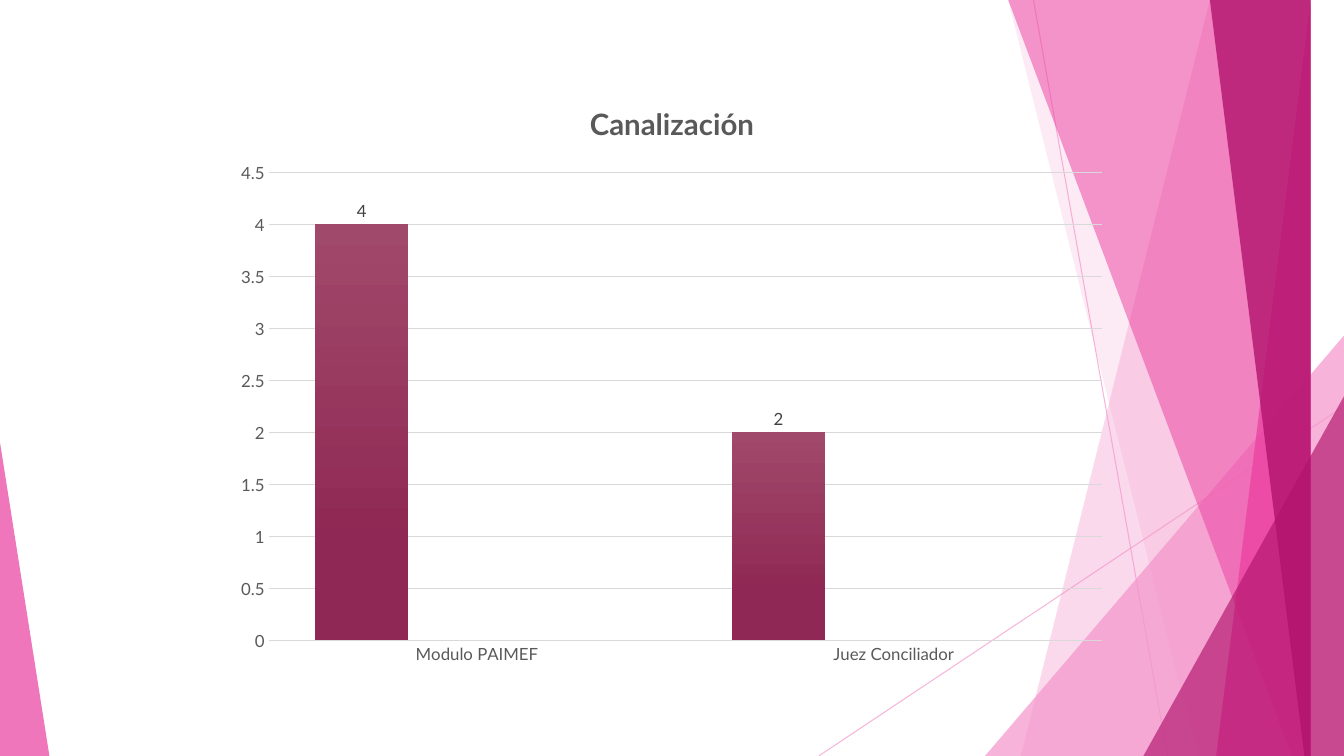
import pptx
import pptx.chart.data
import pptx.dml.color
import pptx.enum.chart
import pptx.enum.shapes
import pptx.oxml
import pptx.oxml.ns
import pptx.util
from lxml import etree

Inches, Pt = pptx.util.Inches, pptx.util.Pt
WIDTH, HEIGHT = 13.33, 7.5
FONT = "Lato"

# Content
TITLE = "Canalización"
CATEGORIES = ["Modulo PAIMEF", "Juez Conciliador"]
SERIES = [  # name, values, gradient from top to bottom
    ("Series 1", (4, 2), ("A1496A", "8F2854")),
    ("Series 2", (None, None), ("BF4E79", "AC3066")),
    ("Series 3", (None, None), ("D8AAB7", "CA92A2")),
]
CHART_BOX = (2.22, 0.79, 8.89, 5.93)
PLOT_AREA = {"x": 0.05, "y": 0.155, "w": 0.93, "h": 0.783}

# Decoration, from back to front
RAYS = [((10.25, 0), (11.58, HEIGHT)), ((WIDTH, 4.03), (8.12, HEIGHT))]
FACETS = [  # band: x at top, x at bottom; triangle: left, top, width, apex
    ("band", (12.28, 10.04), "F496CB", 36),
    ("band", (10.5, 11.83), "F496CB", 20),
    ("triangle", (9.77, 3.33, 3.56, 1), "F496CB", 72),
    ("band", (10.21, 12.91), "EB3D9F", 50),
    ("band", (13.03, 11.92), "EB3D9F", 70),
    ("band", (11.96, 13.18), "B2136D", 80),
    ("triangle", (11.34, 3.93, 1.99, 1), "B2136D", 66),
    ("triangle", (0, 4.39, 0.49, 0), "EB3D9F", 70),
]


def rgb(value):
    return pptx.dml.color.RGBColor.from_string(value)


def set_alpha(fill_parent, percent):
    color = fill_parent.find(".//" + pptx.oxml.ns.qn("a:srgbClr"))
    alpha = etree.SubElement(color, pptx.oxml.ns.qn("a:alpha"))
    alpha.set("val", str(percent * 1000))


def style_font(font, size, color, bold=False):
    font.name, font.size, font.bold = FONT, Pt(size), bold
    font.color.rgb = rgb(color)


def add_ray(page, start, end):
    ray = page.shapes.add_connector(
        pptx.enum.shapes.MSO_CONNECTOR.STRAIGHT,
        *(Inches(value) for value in start + end))
    ray.line.color.rgb = rgb("F496CB")
    ray.line.width = Pt(0.75)
    properties = ray._element.spPr
    set_alpha(properties, 70)
    etree.SubElement(properties, pptx.oxml.ns.qn("a:effectLst"))


def add_facet(page, kind, geometry, color, opacity):
    if kind == "band":
        top_x, bottom_x = geometry
        builder = page.shapes.build_freeform(top_x, 0, scale=Inches(1))
        builder.add_line_segments(
            [(WIDTH, 0), (WIDTH, HEIGHT), (bottom_x, HEIGHT)], close=True)
        facet = builder.convert_to_shape()
    else:
        left, top, width, apex = geometry
        facet = page.shapes.add_shape(
            pptx.enum.shapes.MSO_SHAPE.ISOSCELES_TRIANGLE,
            Inches(left), Inches(top), Inches(width), Inches(HEIGHT - top))
        facet.adjustments[0] = apex
    facet.shadow.inherit = False
    facet.fill.solid()
    facet.fill.fore_color.rgb = rgb(color)
    set_alpha(facet._element.spPr, opacity)
    facet.line.fill.background()


def set_plot_area(chart):
    plot_area = chart._chartSpace.chart.plotArea
    for old in plot_area.findall(pptx.oxml.ns.qn("c:layout")):
        plot_area.remove(old)
    layout = etree.Element(pptx.oxml.ns.qn("c:layout"))
    manual = etree.SubElement(layout, pptx.oxml.ns.qn("c:manualLayout"))
    settings = [("layoutTarget", "inner"), ("xMode", "edge"), ("yMode", "edge")]
    for tag, value in settings + list(PLOT_AREA.items()):
        etree.SubElement(manual, pptx.oxml.ns.qn("c:" + tag)).set("val", str(value))
    plot_area.insert(0, layout)


def add_referral_chart(page):
    chart_data = pptx.chart.data.CategoryChartData()
    chart_data.categories = CATEGORIES
    for name, values, colors in SERIES:
        chart_data.add_series(name, values)
    chart = page.shapes.add_chart(
        pptx.enum.chart.XL_CHART_TYPE.COLUMN_CLUSTERED,
        *(Inches(value) for value in CHART_BOX), chart_data).chart
    style_font(chart.font, 10, "000000")
    chart.has_legend = False

    # Title
    chart.has_title = True
    span = chart.chart_title.text_frame.paragraphs[0].add_run()
    span.text = TITLE
    style_font(span.font, 21, "595959", bold=True)
    chart.chart_title.include_in_layout = False

    # Axes
    for axis in (chart.category_axis, chart.value_axis):
        axis.major_tick_mark = pptx.enum.chart.XL_TICK_MARK.NONE
        axis.minor_tick_mark = pptx.enum.chart.XL_TICK_MARK.NONE
        style_font(axis.tick_labels.font, 12, "595959")
    chart.category_axis.format.line.color.rgb = rgb("D9D9D9")
    chart.category_axis.format.line.width = Pt(1)
    scale = chart.value_axis
    scale.minimum_scale, scale.maximum_scale, scale.major_unit = 0, 4.5, 0.5
    scale.format.line.fill.background()
    scale.major_gridlines.format.line.color.rgb = rgb("D9D9D9")
    scale.major_gridlines.format.line.width = Pt(0.75)

    # Columns and value labels
    plot = chart.plots[0]
    plot.gap_width, plot.overlap, plot.vary_by_categories = 100, -24, False
    for series, (name, values, colors) in zip(plot.series, SERIES):
        fill = series.format.fill
        fill.gradient()
        fill.gradient_angle = 270
        for stop, color, position in zip(fill.gradient_stops, colors, (0, 0.78)):
            stop.color.rgb = rgb(color)
            stop.position = position
        labels = series.data_labels
        labels.show_value = True
        labels.position = pptx.enum.chart.XL_LABEL_POSITION.OUTSIDE_END
        style_font(labels.font, 12, "404040")
    set_plot_area(chart)


def main():
    deck = pptx.Presentation()
    deck.slide_width, deck.slide_height = Inches(WIDTH), Inches(HEIGHT)
    page = deck.slides.add_slide(deck.slide_layouts[6])
    for start, end in RAYS:
        add_ray(page, start, end)
    for facet in FACETS:
        add_facet(page, *facet)
    add_referral_chart(page)
    deck.save("out.pptx")


if __name__ == "__main__":
    main()
